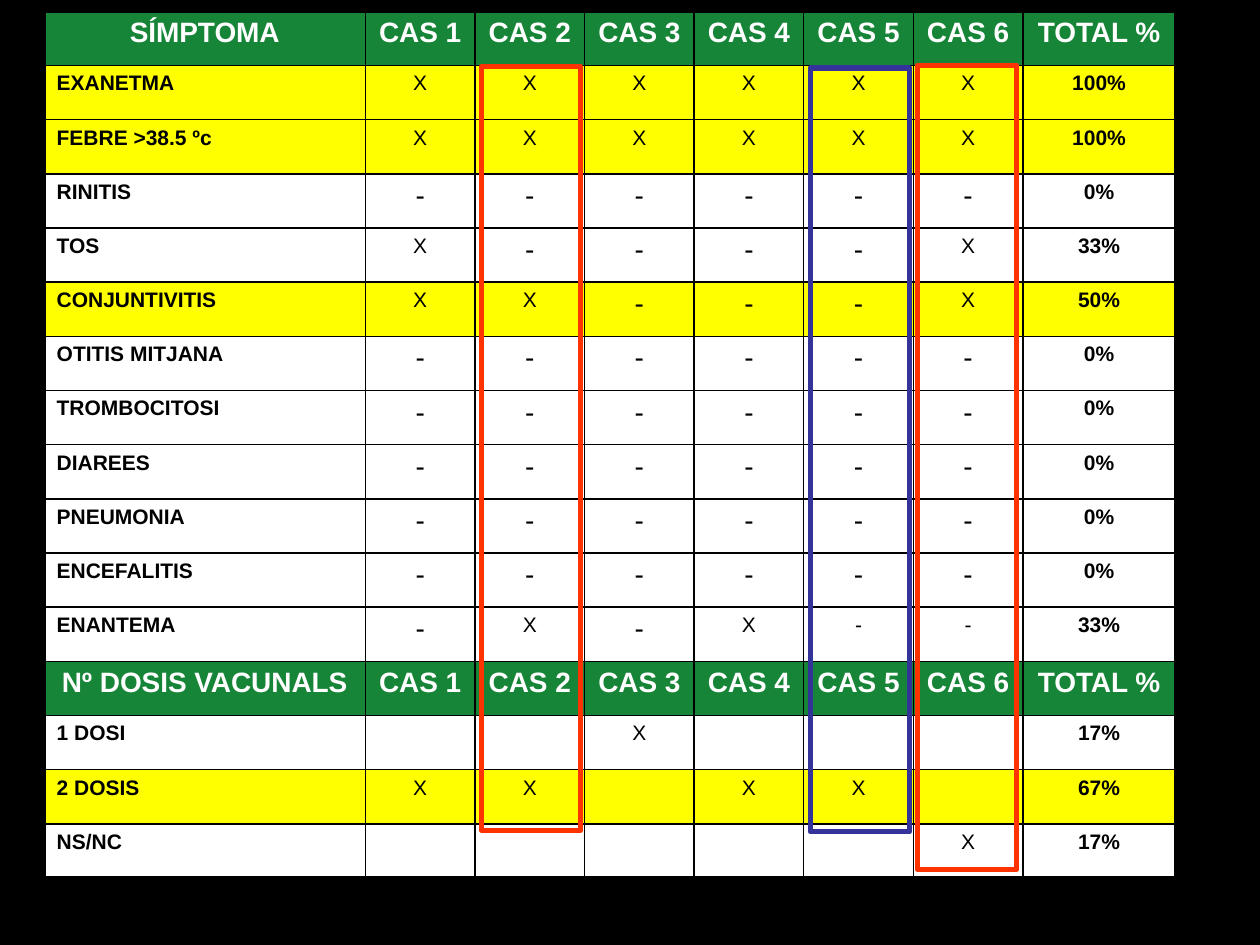
import pptx
import pptx.dml.color
import pptx.enum.shapes
import pptx.enum.text
import pptx.oxml.ns
import pptx.util
from lxml import etree
from pptx.util import Inches

GREEN, YELLOW, WHITE, BLACK = "178537", "FFFF00", "FFFFFF", "000000"
ORANGE, BLUE = "FF3300", "333399"
CASES = 6
COLUMN_WIDTHS = [2.55] + [0.87] * CASES + [1.21]
ROW_HEIGHT = 0.43
THIN, THICK = 1, 2.25

# Label, one mark per case ("s" is a small dash), total, fill
HEADER = "header"
ROWS = [
    ("SÍMPTOMA", HEADER, "TOTAL %", GREEN),
    ("EXANETMA", "XXXXXX", "100%", YELLOW),
    ("FEBRE >38.5 ºc", "XXXXXX", "100%", YELLOW),
    ("RINITIS", "------", "0%", WHITE),
    ("TOS", "X----X", "33%", WHITE),
    ("CONJUNTIVITIS", "XX---X", "50%", YELLOW),
    ("OTITIS MITJANA", "------", "0%", WHITE),
    ("TROMBOCITOSI", "------", "0%", WHITE),
    ("DIAREES", "------", "0%", WHITE),
    ("PNEUMONIA", "------", "0%", WHITE),
    ("ENCEFALITIS", "------", "0%", WHITE),
    ("ENANTEMA", "-X-Xss", "33%", WHITE),
    ("Nº DOSIS VACUNALS", HEADER, "TOTAL %", GREEN),
    ("1 DOSI", "  X   ", "17%", WHITE),
    ("2 DOSIS", "XX XX ", "67%", YELLOW),
    ("NS/NC", "     X", "17%", WHITE),
]
# Text and size of each mark
MARKS = {"X": ("X", 12), "-": ("-", 16), "s": ("-", 12), " ": ("", 12)}

# Frames around single cases: left, top, height, colour
FRAME_WIDTH = 0.79
FRAMES = [
    (3.82, 0.53, 6.06, ORANGE),
    (7.28, 0.52, 6.38, ORANGE),
    (6.43, 0.54, 6.06, BLUE),
]


def colour(value):
    return pptx.dml.color.RGBColor.from_string(value)


def set_border(cell, side, width):
    properties = cell._tc.get_or_add_tcPr()
    line = etree.SubElement(properties, pptx.oxml.ns.qn("a:ln" + side))
    line.set("w", str(int(pptx.util.Pt(width))))
    fill = etree.SubElement(line, pptx.oxml.ns.qn("a:solidFill"))
    etree.SubElement(fill, pptx.oxml.ns.qn("a:srgbClr")).set("val", BLACK)


def write_cell(cell, text, size, bold, text_colour, centred):
    para = cell.text_frame.paragraphs[0]
    para.font.size = pptx.util.Pt(size)
    if centred:
        para.alignment = pptx.enum.text.PP_ALIGN.CENTER
    if text:
        span = para.add_run()
        span.text = text
        span.font.name = "Arial"
        span.font.size = pptx.util.Pt(size)
        span.font.bold = bold
        span.font.color.rgb = colour(text_colour)


def row_entries(label, marks, total):
    """Return text, size, bold and centred for each cell of a row."""
    if marks == HEADER:
        names = [label] + [f"CAS {number + 1}" for number in range(CASES)] + [total]
        return [(name, 16, True, True) for name in names]
    middle = [(*MARKS[mark], False, True) for mark in marks]
    return [(label, 12, True, False)] + middle + [(total, 12, True, True)]


def add_symptom_table(page):
    last_row, last_column = len(ROWS) - 1, len(COLUMN_WIDTHS) - 1
    table = page.shapes.add_table(
        len(ROWS), len(COLUMN_WIDTHS), Inches(0.35), Inches(0.09),
        Inches(sum(COLUMN_WIDTHS)), Inches(ROW_HEIGHT * len(ROWS)),
    ).table
    table.first_row = table.horz_banding = False
    for column, width in zip(table.columns, COLUMN_WIDTHS):
        column.width = Inches(width)

    for r, (label, marks, total, fill) in enumerate(ROWS):
        table.rows[r].height = Inches(ROW_HEIGHT)
        text_colour = WHITE if marks == HEADER else BLACK
        for c, (text, size, bold, centred) in enumerate(row_entries(label, marks, total)):
            cell = table.cell(r, c)
            # The outer edge is thicker than the inner grid
            edges = {"L": c == 0, "R": c == last_column, "T": r == 0, "B": r == last_row}
            for side, outer in edges.items():
                set_border(cell, side, THICK if outer else THIN)
            cell.fill.solid()
            cell.fill.fore_color.rgb = colour(fill)
            write_cell(cell, text, size, bold, text_colour, centred)


def add_frame(page, left, top, height, line_colour):
    frame = page.shapes.add_shape(
        pptx.enum.shapes.MSO_SHAPE.RECTANGLE,
        Inches(left), Inches(top), Inches(FRAME_WIDTH), Inches(height),
    )
    frame.shadow.inherit = False
    frame.fill.background()
    frame.line.color.rgb = colour(line_colour)
    frame.line.width = pptx.util.Pt(3)


def main():
    deck = pptx.Presentation()
    deck.slide_width, deck.slide_height = Inches(10), Inches(7.5)
    page = deck.slides.add_slide(deck.slide_layouts[6])
    page.background.fill.solid()
    page.background.fill.fore_color.rgb = colour(BLACK)

    add_symptom_table(page)
    for frame in FRAMES:
        add_frame(page, *frame)
    deck.save("out.pptx")


if __name__ == "__main__":
    main()
